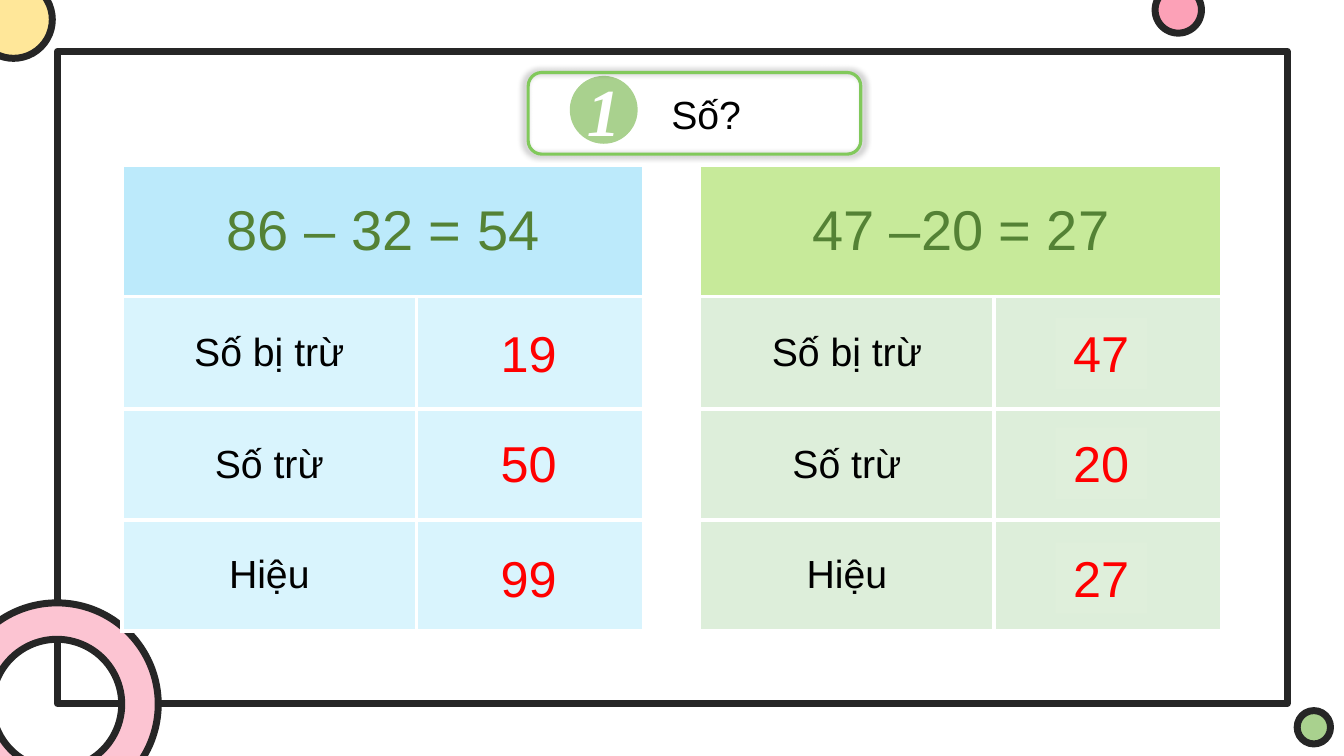
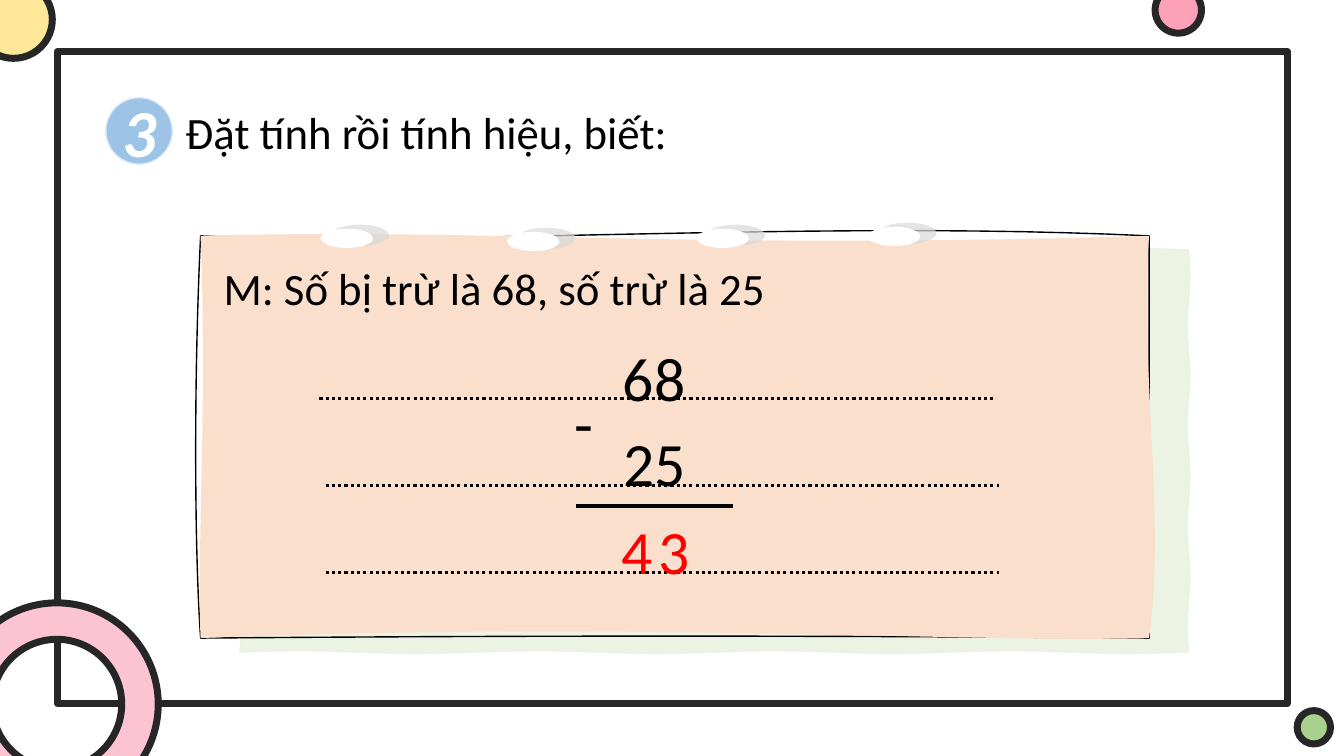
import math

from lxml import etree
from pptx import Presentation
from pptx.dml.color import RGBColor
from pptx.enum.dml import MSO_LINE
from pptx.enum.shapes import MSO_CONNECTOR, MSO_SHAPE
from pptx.enum.text import MSO_ANCHOR, MSO_AUTO_SIZE, PP_ALIGN
from pptx.oxml.ns import qn
from pptx.util import Pt

LEFT, CENTER = PP_ALIGN.LEFT, PP_ALIGN.CENTER
TOP, MIDDLE = MSO_ANCHOR.TOP, MSO_ANCHOR.MIDDLE
OVAL, RECTANGLE = MSO_SHAPE.OVAL, MSO_SHAPE.RECTANGLE
DONUT, ROUNDED = MSO_SHAPE.DONUT, MSO_SHAPE.ROUNDED_RECTANGLE
STRAIGHT = MSO_CONNECTOR.STRAIGHT
DOTTED = MSO_LINE.ROUND_DOT

COLORS = {
    "ink": "262626", "black": "000000", "white": "FFFFFF", "red": "FF0000",
    "yellow": "FFE799", "pink": "FCA1B7", "light pink": "FCC4D2",
    "green": "A9D18E", "frame green": "81C95B", "sum green": "548235",
    "blue": "9DC3E6", "pale blue": "DEEBF7",
    "blue head": "BCEAFB", "blue body": "D9F4FD",
    "green head": "C7EA9A", "green body": "DDEEDA", "green answer": "DFEFDB",
    "peach": "FADFCD", "paper green": "EBF2DE", "gray": "D9D9D9",
}


def paint(shape, fill=None, line=None, width=1, opacity=100):
    """Set fill, outline and opacity, and switch the shadow off."""
    shape.shadow.inherit = False
    if fill:
        shape.fill.solid()
        shape.fill.fore_color.rgb = RGBColor.from_string(COLORS[fill])
        if opacity < 100:
            color = shape.element.xpath("./p:spPr/a:solidFill/a:srgbClr")[0]
            etree.SubElement(color, qn("a:alpha"), val=str(opacity * 1000))
    else:
        shape.fill.background()
    if line:
        shape.line.color.rgb = RGBColor.from_string(COLORS[line])
        shape.line.width = Pt(width)
    else:
        shape.line.fill.background()


def write(frame, text, size, font, color="black", align=LEFT, anchor=TOP):
    """Fill a text frame with one formatted line and return its span."""
    frame.text = text
    frame.word_wrap = True
    frame.auto_size = MSO_AUTO_SIZE.NONE
    frame.vertical_anchor = anchor
    para = frame.paragraphs[0]
    para.alignment = align
    span = para.runs[0]
    span.font.size = Pt(size)
    span.font.name = font
    span.font.color.rgb = RGBColor.from_string(COLORS[color])
    return span


deck = Presentation()
deck.slide_width, deck.slide_height = Pt(960), Pt(540)
layout = deck.slide_layouts[5]
for holder in list(layout.placeholders)[1:]:
    holder.element.getparent().remove(holder.element)

# Titles and numbered badges: text, box, size, font, badge place and look
headings = [
    ("Số?", (472.3, 61.2, 73, 41), 28, "Arial",
     "1", (407.5, 54.7), "Times New Roman", "green", "green"),
    ("Đặt tính rồi tính hiệu, biết:", (125.3, 71.3, 660, 46), 32, "Calibri",
     "3", (75.6, 69.8), "Calibri", "blue", "pale blue"),
]
pages = []
for text, place, size, font, number, corner, badge_font, fill, line in headings:
    page = deck.slides.add_slide(layout)
    pages.append(page)
    title = page.shapes.title
    title.left, title.top, title.width, title.height = map(Pt, place)
    write(title.text_frame, text, size, font)

    badge = page.shapes.add_shape(OVAL, *map(Pt, (*corner, 47.5, 47.5)))
    paint(badge, fill, line)
    frame = badge.text_frame
    frame.margin_left = frame.margin_right = 0
    frame.margin_top = frame.margin_bottom = 0
    span = write(frame, number, 48, badge_font, "white", CENTER, MIDDLE)
    span.font.bold = span.font.italic = True

subtraction, column_sum = pages

# Shared frame and corner rings, drawn once and moved to the layout
decorations = [
    (RECTANGLE, (41, 36.7, 878.4, 465.8), None),
    (OVAL, (-18, -13.7, 55.4, 55.4), "yellow"),
    (DONUT, (-31.7, 430.6, 144.7, 144.7), "light pink"),
    (OVAL, (926.6, 507.6, 23.8, 23.8), "green"),
    (OVAL, (825.1, -9.4, 33.1, 33.1), "pink"),
]
for kind, place, fill in decorations:
    shape = subtraction.shapes.add_shape(kind, *map(Pt, place))
    if kind == DONUT:
        shape.adjustments[0] = 0.18
    paint(shape, fill, "ink", 5)
    layout.shapes.element.append(shape.element)

# Slide 1: glowing title frame and two tables
title_frame = subtraction.shapes.add_shape(
    ROUNDED, Pt(377.3), Pt(51.8), Pt(237.6), Pt(58.3))
paint(title_frame, None, "frame green", 2.25)
effects = title_frame.element.spPr.find(qn("a:effectLst"))
glow = etree.SubElement(effects, qn("a:outerShdw"), blurRad="63500",
                        sx="102000", sy="102000", algn="ctr", rotWithShape="0")
glow_color = etree.SubElement(glow, qn("a:prstClr"), val="black")
etree.SubElement(glow_color, qn("a:alpha"), val="40000")

LABELS = ["Số bị trừ", "Số trừ", "Hiệu"]
COLUMN_WIDTHS = [210.5, 162.5]
ROW_HEIGHTS = [93.6, 80.5, 79.2, 79.2]
ANSWER_TOPS = [226.8, 305.3, 387.4]
tables = [
    (87.1, "86 – 32 = 54", ["19", "50", "99"], 344.9,
     "blue head", "blue body", "blue body"),
    (499.7, "47 –20 = 27", ["47", "20", "27"], 753.8,
     "green head", "green body", "green answer"),
]
for left, equation, answers, answer_left, head, body, answer_fill in tables:
    table = subtraction.shapes.add_table(
        4, 2, Pt(left), Pt(118.1),
        Pt(sum(COLUMN_WIDTHS)), Pt(sum(ROW_HEIGHTS))).table
    table.first_row = table.horz_banding = False
    for column, width in zip(table.columns, COLUMN_WIDTHS):
        column.width = Pt(width)
    for row, height in zip(table.rows, ROW_HEIGHTS):
        row.height = Pt(height)

    for index, row in enumerate(table.rows):
        for cell in row.cells:
            properties = cell._tc.get_or_add_tcPr()
            for side in ("lnL", "lnR", "lnT", "lnB"):
                border = etree.SubElement(
                    properties, qn(f"a:{side}"), w=str(Pt(3)))
                paint_fill = etree.SubElement(border, qn("a:solidFill"))
                etree.SubElement(
                    paint_fill, qn("a:srgbClr"), val=COLORS["white"])
            cell.fill.solid()
            cell.fill.fore_color.rgb = RGBColor.from_string(
                COLORS[body if index else head])

    table.cell(0, 0).merge(table.cell(0, 1))
    for index, text in enumerate([equation, *LABELS]):
        cell = table.cell(index, 0)
        cell.vertical_anchor = MIDDLE
        cell.text = text
        para = cell.text_frame.paragraphs[0]
        para.alignment = CENTER
        font = para.runs[0].font
        font.name = "Arial"
        font.size = Pt(28 if index else 40)
        font.color.rgb = RGBColor.from_string(
            COLORS["black" if index else "sum green"])

    for answer, top in zip(answers, ANSWER_TOPS):
        box = subtraction.shapes.add_textbox(
            Pt(answer_left), Pt(top), Pt(65.5), Pt(51))
        paint(box, answer_fill)
        write(box.text_frame, answer, 36, "Arial", "red", CENTER)

# Slide 2: the back sheet has rippled edges, the front sheet curved ones
corners = [(171.4, 178.6), (848.9, 178.6), (848.9, 465.8), (171.4, 465.8)]
ripple = []
for (x0, y0), (x1, y1) in zip(corners, corners[1:] + corners[:1]):
    for step in range(32):
        t = step / 32
        offset = math.sin(t * 8 * math.pi)
        ripple.append((x0 + (x1 - x0) * t + (offset if x0 == x1 else 0),
                       y0 + (y1 - y0) * t + (offset if y0 == y1 else 0)))

# Each edge runs from the last point, by two control points, to its end
front_corners = [(143.3, 168.5), (820.8, 168.5), (820.8, 455.8), (143.3, 455.8)]
outline_controls = [
    ((310.3, 176.4), (582.5, 157)), ((820.8, 311), (820.8, 386.6)),
    ((517, 453.6), (346.3, 454.3)), ((139, 395.3), (138.2, 273.6)),
]
sheet_controls = [
    ((347, 162.7), (483.1, 178.6)), ((813.6, 257), (833, 371.5)),
    ((692.6, 459.4), (449.3, 443.5)), ((140.4, 394.6), (148.3, 292.3)),
]
sheets = [(ripple, "paper green", "paper green", 88)]
for controls, fill, line in [(outline_controls, None, "black"),
                             (sheet_controls, "peach", None)]:
    points = []
    for index, (first, second) in enumerate(controls):
        edge = (front_corners[index], first, second,
                front_corners[(index + 1) % 4])
        for step in range(24):
            t = step / 24
            weights = ((1 - t) ** 3, 3 * t * (1 - t) ** 2,
                       3 * t * t * (1 - t), t ** 3)
            points.append(tuple(
                sum(weight * point[axis] for weight, point in zip(weights, edge))
                for axis in (0, 1)))
    sheets.append((points, fill, line, 100))

for points, fill, line, opacity in sheets:
    outline = [(Pt(x), Pt(y)) for x, y in points]
    builder = column_sum.shapes.build_freeform(*outline[0])
    builder.add_line_segments(outline[1:], close=True)
    paint(builder.convert_to_shape(), fill, line, 1, opacity)

# Punched holes: a gray shade behind each white oval
holes = [(229, 163.4), (362.2, 165.6), (497.5, 163.4), (619.9, 162)]
for dx, dy, width, height, fill, opacity in [
        (7.2, -2.9, 41.8, 15.1, "gray", 71), (0, 0, 37.4, 13.7, "white", 100)]:
    for x, y in holes:
        hole = column_sum.shapes.add_shape(
            OVAL, Pt(x + dx), Pt(y + dy), Pt(width), Pt(height))
        paint(hole, fill, opacity=opacity)

# Dotted writing lines and the solid line above the result
rules = [(228.2, 284.4, 481, True), (232.6, 346.9, 481, True),
         (232.6, 409.1, 481, True), (411.1, 361.4, 112.3, False)]
for x, y, length, dotted in rules:
    rule = column_sum.shapes.add_connector(
        STRAIGHT, Pt(x), Pt(y), Pt(x + length), Pt(y))
    rule.line.color.rgb = RGBColor.from_string(COLORS["black"])
    rule.line.width = Pt(2.25)
    if dotted:
        rule.line.dash_style = DOTTED
    etree.SubElement(rule.element.spPr, qn("a:effectLst"))

texts = [
    ("M: Số bị trừ là 68, số trừ là 25", (152.6, 182.9, 642.2, 46), 32, "black"),
    ("68", (437.8, 239, 60, 60.5), 44, "black"),
    ("-", (403.2, 271.4, 28, 60.5), 44, "black"),
    ("25", (438.5, 300.2, 83.5, 60.5), 44, "black"),
    ("3", (463, 362.9, 37, 60.5), 44, "red"),
    ("4", (437, 362.9, 37, 60.5), 44, "red"),
]
for text, place, size, color in texts:
    box = column_sum.shapes.add_textbox(*map(Pt, place))
    write(box.text_frame, text, size, "Calibri", color)

deck.save("out.pptx")
